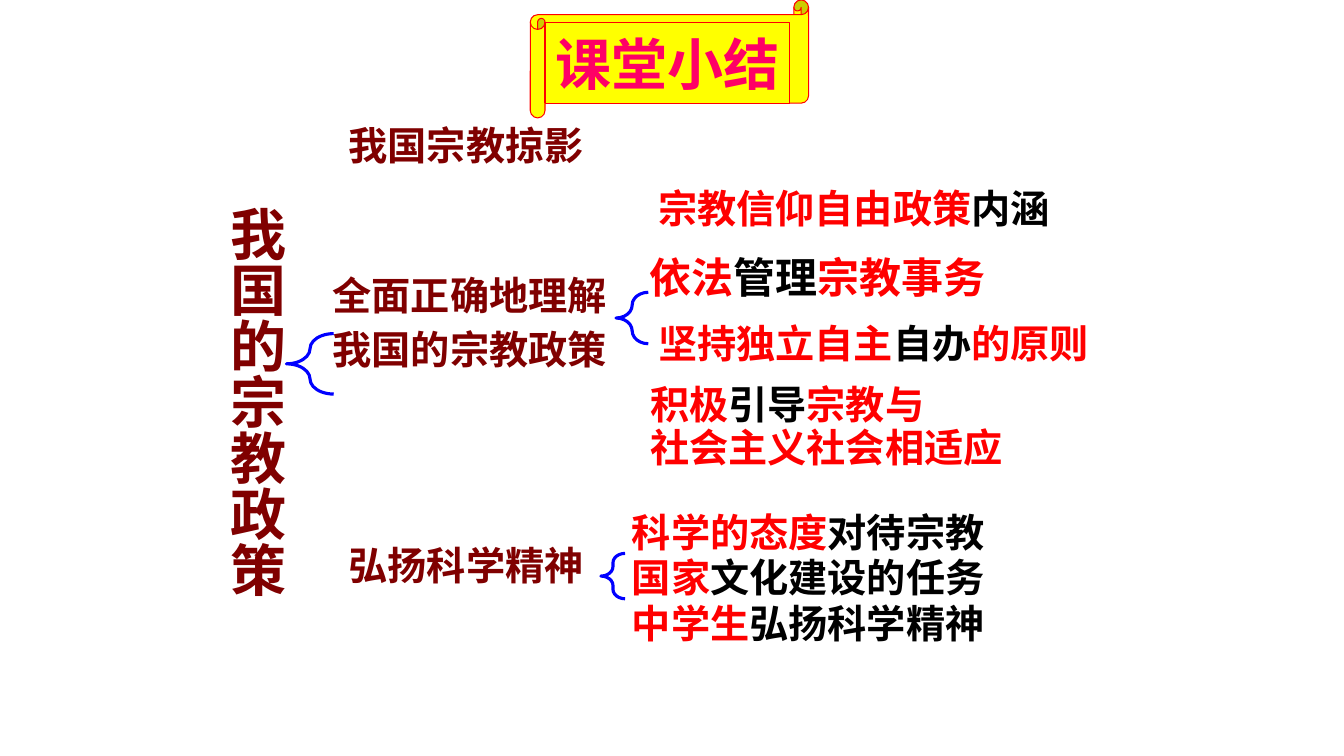
"""Build the lesson summary slide on religious policy as a brace diagram."""
from pptx import Presentation
from pptx.dml.color import RGBColor
from pptx.enum.shapes import MSO_SHAPE
from pptx.enum.text import MSO_ANCHOR, PP_ALIGN
from pptx.oxml.ns import qn
from pptx.util import Inches, Pt

FONT = "Noto Sans CJK SC"
RED, BLACK, MAROON = "FF0000", "000000", "800000"
BLUE, YELLOW, PINK = "0000FF", "FFFF00", "FF0066"

BANNER = "课堂小结"
TITLE = [[("依法", RED), ("管理", BLACK), ("宗教事务", RED)]]
TEXTS = [
    ((6.43, 1.78, 4.09, 0.57), [[("宗教信仰自由政策", RED), ("内涵", BLACK)]], {}),
    ((6.43, 3.12, 6.67, 0.57),
     [[("坚持独立自主", RED), ("自办", BLACK), ("的原则", RED)]], {}),
    ((6.35, 3.83, 6.85, 0.96),
     [[("积极", RED), ("引导", BLACK), ("宗教与", RED)],
      [("社会主义社会相适应", RED)]], {"line_spacing": 0.75, "gap": 5.6}),
    ((3.2, 2.57, 2.92, 1.17),
     [[("全面正确地理解", MAROON)], [("我国的宗教政策", MAROON)]],
     {"line_spacing": 1.15}),
    ((2.06, 1.95, 0.87, 4.65), [[("我国的宗教政策", MAROON)]],
     {"size": 40, "vertical": True}),
    ((3.36, 5.32, 2.55, 0.57), [[("弘扬科学精神", MAROON)]], {}),
    ((6.17, 5.08, 5, 1.45),
     [[("科学的态度", RED), ("对待宗教", BLACK)],
      [("国家", RED), ("文化建设的任务", BLACK)],
      [("中学生", RED), ("弘扬科学精神", BLACK)]],
     {"line_spacing": 0.8, "gap": 5.6}),
    ((3.36, 1.15, 5.36, 0.57), [[("我国宗教掠影", MAROON)]], {}),
]
BRACES = [
    ((2.84, 3.31, 0.47, 0.6), 0.72),
    ((6.11, 2.9, 0.32, 0.51), 0.6),
    ((5.96, 5.49, 0.24, 0.45), 0.39),
]
SCROLL_BOX = (5.26, 0, 2.76, 1.17)
BANNER_BOX = (5.41, 0.22, 2.42, 0.81)


def color(value):
    return RGBColor.from_string(value)


def write(shape, lines, size=28, font=FONT, line_spacing=1, gap=0,
          align=PP_ALIGN.LEFT, anchor=MSO_ANCHOR.TOP, wrap=True, vertical=False):
    frame = shape.text_frame
    frame.word_wrap = wrap
    frame.vertical_anchor = anchor
    if vertical:
        frame._txBody.bodyPr.set("vert", "eaVert")
    for index, line in enumerate(lines):
        paragraph = frame.add_paragraph() if index else frame.paragraphs[0]
        paragraph.alignment = align
        paragraph.line_spacing = line_spacing
        paragraph.space_before = Pt(gap if index else 0)
        for text, text_color in line:
            run = paragraph.add_run()
            run.text = text
            run.font.size = Pt(size)
            run.font.bold = True
            run.font.name = font
            run.font.color.rgb = color(text_color)
            east_asian = run.font._element.makeelement(qn("a:ea"), {"typeface": FONT})
            run.font._element.find(qn("a:latin")).addnext(east_asian)


def add_preset(shapes, preset, box, line, width, fill=None):
    shape = shapes.add_shape(preset, *map(Inches, box))
    shape.shadow.inherit = False
    shape.line.color.rgb = color(line)
    shape.line.width = Pt(width)
    if fill:
        shape.fill.solid()
        shape.fill.fore_color.rgb = color(fill)
    else:
        shape.fill.background()
    return shape


def main():
    presentation = Presentation()
    presentation.slide_width, presentation.slide_height = Inches(13.33), Inches(7.5)
    slide = presentation.slides.add_slide(presentation.slide_layouts[5])

    title = slide.shapes.title
    title.left, title.top, title.width, title.height = map(Inches, (6.34, 2.49, 3.87, 0.57))
    write(title, TITLE, size=30, line_spacing=0.9, anchor=MSO_ANCHOR.MIDDLE)

    for box, lines, style in TEXTS:
        write(slide.shapes.add_textbox(*map(Inches, box)), lines, **style)

    for box, curve in BRACES:
        brace = add_preset(slide.shapes, MSO_SHAPE.LEFT_BRACE, box, BLUE, 2.25)
        brace.adjustments[0] = curve

    banner = slide.shapes.add_group_shape()
    add_preset(banner.shapes, MSO_SHAPE.HORIZONTAL_SCROLL, SCROLL_BOX, RED, 0.75, YELLOW)
    panel = add_preset(banner.shapes, MSO_SHAPE.RECTANGLE, BANNER_BOX, RED, 0.75, YELLOW)
    write(panel, [[(BANNER, PINK)]], size=40, font="Times New Roman",
          align=PP_ALIGN.CENTER, anchor=MSO_ANCHOR.MIDDLE, wrap=False)

    presentation.save("out.pptx")


if __name__ == "__main__":
    main()
